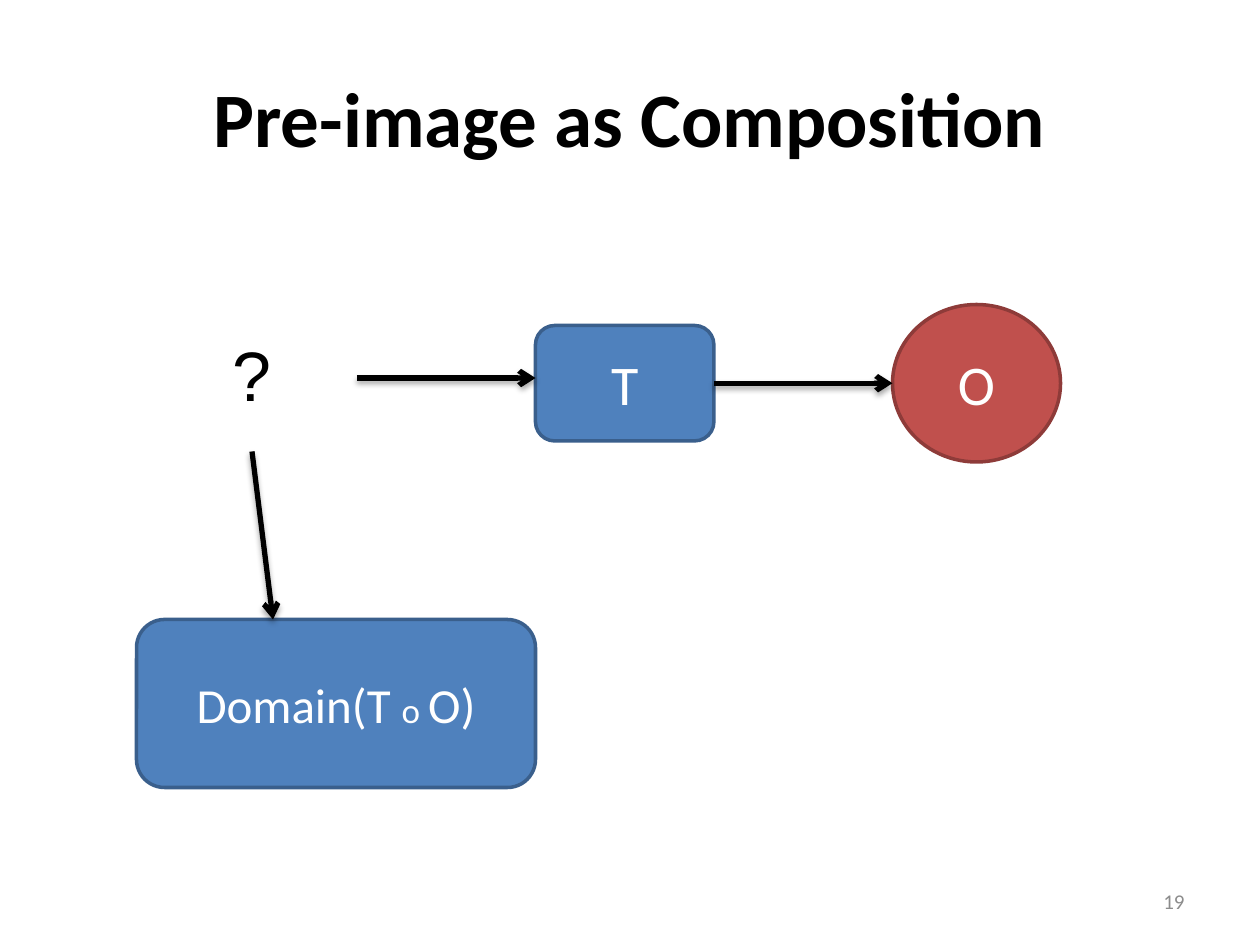
"""Build the slide that shows a pre-image as a composition of T and O."""
from lxml.etree import SubElement
from pptx import Presentation
from pptx.dml.color import RGBColor
from pptx.enum.shapes import MSO_CONNECTOR, MSO_SHAPE
from pptx.enum.text import MSO_ANCHOR, PP_ALIGN
from pptx.oxml import parse_xml
from pptx.oxml.ns import qn
from pptx.util import Pt

BLACK = RGBColor(0x00, 0x00, 0x00)
WHITE = RGBColor(0xFF, 0xFF, 0xFF)
GRAY = RGBColor(0x8C, 0x8C, 0x8C)
BLUE = RGBColor(0x4F, 0x81, 0xBD)
DARK_BLUE = RGBColor(0x3A, 0x5F, 0x8C)
RED = RGBColor(0xC0, 0x50, 0x4D)
DARK_RED = RGBColor(0x8E, 0x3B, 0x39)

TITLE = "Pre-image as Composition"
TITLE_BOX = (36, 21.6, 648, 90)
LABELS = [
    ([("19", 12)], (516, 500.5, 168, 28.75),
     dict(color=GRAY, align=PP_ALIGN.RIGHT, anchor=MSO_ANCHOR.MIDDLE)),
    ([("?", 40)], (126, 186, 36.5, 55.75), dict(font="Arial", wrap=False)),
]
NODES = [
    ([("T", 32)], MSO_SHAPE.ROUNDED_RECTANGLE, (306, 186, 102, 66), BLUE, DARK_BLUE),
    ([("O", 32)], MSO_SHAPE.OVAL, (510, 174, 96, 90), RED, DARK_RED),
    ([("Domain(T ", 28), ("o ", 20), ("O)", 28)], MSO_SHAPE.ROUNDED_RECTANGLE,
     (78, 354, 228, 96), BLUE, DARK_BLUE),
]
ARROWS = [
    ((408, 219), (510, 219)),
    ((204, 216), (306, 216)),
    ((144, 258), (156, 354)),
]
SHADOW = (
    '<a:effectLst xmlns:a="http://schemas.openxmlformats.org/drawingml/2006/main">'
    '<a:outerShdw blurRad="40000" dist="23000" dir="5400000" rotWithShape="0">'
    '<a:srgbClr val="000000"><a:alpha val="35000"/></a:srgbClr>'
    '</a:outerShdw></a:effectLst>'
)


def points(values):
    return [Pt(value) for value in values]


def write(holder, runs, color=BLACK, font="Calibri", bold=False,
          align=PP_ALIGN.CENTER, anchor=MSO_ANCHOR.TOP, wrap=True):
    frame = holder.text_frame
    frame.word_wrap = wrap
    frame.vertical_anchor = anchor
    paragraph = frame.paragraphs[0]
    paragraph.alignment = align
    for words, size in runs:
        run = paragraph.add_run()
        run.text = words
        run.font.name = font
        run.font.size = Pt(size)
        run.font.bold = bold
        run.font.color.rgb = color


def add_node(slide, runs, outline, box, fill, edge):
    node = slide.shapes.add_shape(outline, *points(box))
    node.shadow.inherit = False
    node.fill.solid()
    node.fill.fore_color.rgb = fill
    node.line.color.rgb = edge
    node.line.width = Pt(2)
    write(node, runs, color=WHITE, anchor=MSO_ANCHOR.MIDDLE)


def add_arrow(slide, start, end):
    arrow = slide.shapes.add_connector(MSO_CONNECTOR.STRAIGHT, *points(start + end))
    arrow.line.color.rgb = BLACK
    arrow.line.width = Pt(3)
    SubElement(arrow.line._get_or_add_ln(), qn("a:tailEnd"), type="arrow")
    arrow._element.spPr.append(parse_xml(SHADOW))


def main():
    deck = Presentation()
    deck.slide_width, deck.slide_height = Pt(720), Pt(540)
    slide = deck.slides.add_slide(deck.slide_layouts[5])
    title = slide.shapes.title
    title.left, title.top, title.width, title.height = points(TITLE_BOX)
    write(title, [(TITLE, 44)], bold=True, anchor=MSO_ANCHOR.MIDDLE)
    for runs, box, style in LABELS:
        write(slide.shapes.add_textbox(*points(box)), runs, **style)
    for node in NODES:
        add_node(slide, *node)
    for start, end in ARROWS:
        add_arrow(slide, start, end)
    deck.save("out.pptx")


if __name__ == "__main__":
    main()
